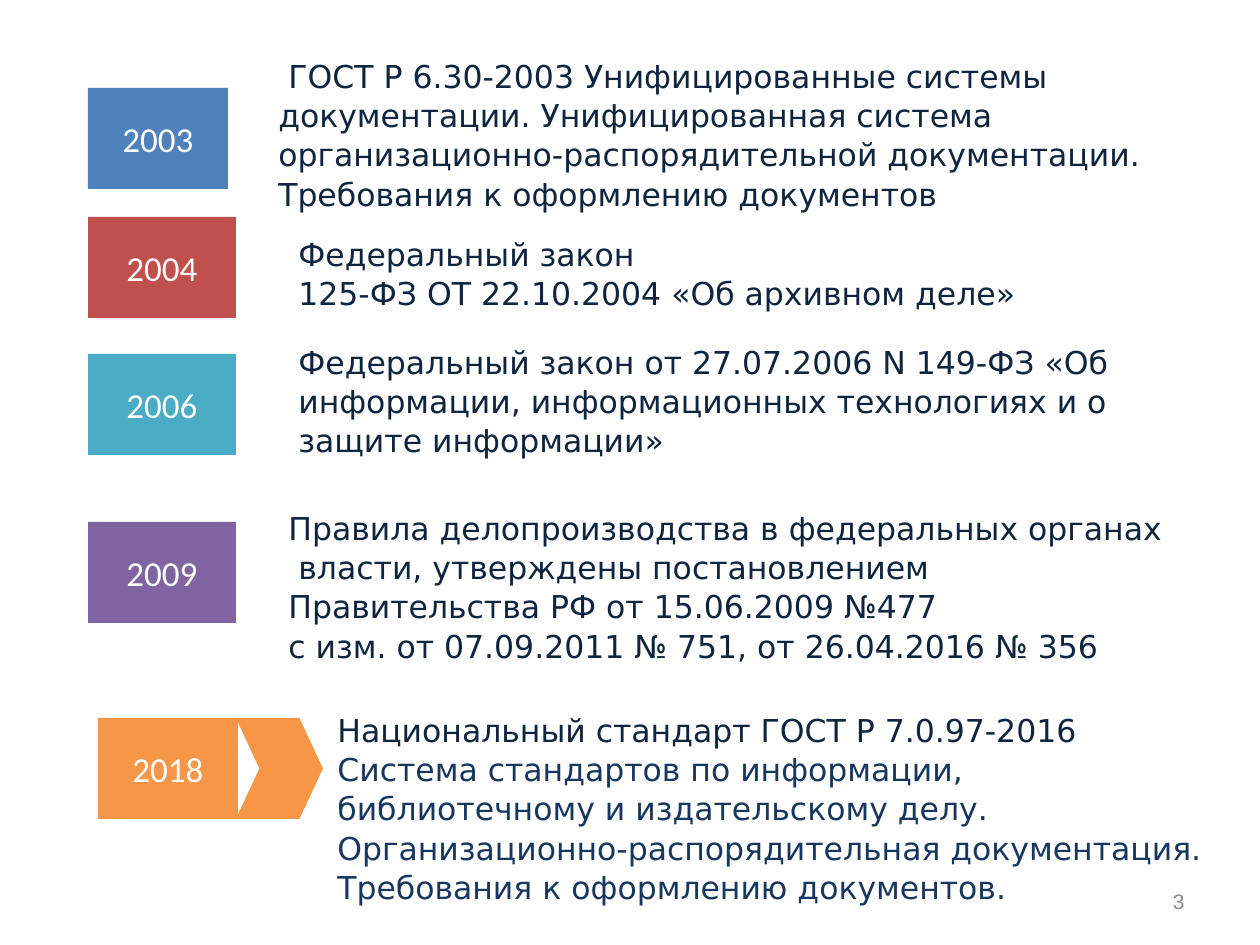
from dataclasses import dataclass

from pptx import Presentation
from pptx.dml.color import RGBColor as Color
from pptx.enum.shapes import MSO_SHAPE as Shape
from pptx.enum.text import MSO_ANCHOR as Anchor, PP_ALIGN as Align
from pptx.util import Emu, Pt

PX = 914400 / 126


def px(length):
    return Emu(round(length * PX))


@dataclass(frozen=True)
class Theme:
    blue: str = "4F81BD"
    red: str = "C0504D"
    teal: str = "4BACC6"
    purple: str = "8064A2"
    orange: str = "F79646"
    white: str = "FFFFFF"
    navy: str = "0F243E"
    dark_blue: str = "17375E"
    gray: str = "8C8C8C"
    year_font: str = "Calibri"
    body_font: str = "DejaVu Sans"
    number_font: str = "Arial"
    year_size: int = 20
    body_size: int = 18
    number_size: int = 12
    body_spacing: float = 1.04


class TimelineSlide:
    def __init__(self, presentation, theme):
        self.theme = theme
        self.slide = presentation.slides.add_slide(presentation.slide_layouts[6])

    def style(self, paragraph, font, size, color, align=Align.LEFT):
        paragraph.alignment = align
        paragraph.font.name = font
        paragraph.font.size = Pt(size)
        paragraph.font.color.rgb = Color.from_string(color)

    def block(self, kind, box, color):
        shape = self.slide.shapes.add_shape(kind, *map(px, box))
        shape.shadow.inherit = False
        shape.fill.solid()
        shape.fill.fore_color.rgb = Color.from_string(color)
        shape.line.fill.background()
        return shape

    def year(self, text, box, color):
        frame = self.block(Shape.RECTANGLE, box, color).text_frame
        frame.vertical_anchor = Anchor.MIDDLE
        frame.text = text
        theme = self.theme
        self.style(frame.paragraphs[0], theme.year_font, theme.year_size,
                   theme.white, Align.CENTER)

    def chevron(self, box, color, depth):
        self.block(Shape.CHEVRON, box, color).adjustments[0] = depth

    def text_frame(self, box):
        frame = self.slide.shapes.add_textbox(*map(px, box)).text_frame
        frame.word_wrap = True
        return frame

    def description(self, box, paragraphs):
        frame = self.text_frame(box)
        theme = self.theme
        for index, (text, color, indent) in enumerate(paragraphs):
            paragraph = frame.paragraphs[0] if index == 0 else frame.add_paragraph()
            paragraph.text = text
            paragraph.line_spacing = theme.body_spacing
            if indent:
                paragraph._p.get_or_add_pPr().set("indent", str(px(indent)))
            self.style(paragraph, theme.body_font, theme.body_size, color)

    def page_number(self, text, box):
        frame = self.text_frame(box)
        frame.vertical_anchor = Anchor.MIDDLE
        frame.text = text
        theme = self.theme
        self.style(frame.paragraphs[0], theme.number_font, theme.number_size,
                   theme.gray, Align.RIGHT)


def main():
    presentation = Presentation()
    presentation.slide_width = px(1260)
    presentation.slide_height = px(945)
    theme = Theme()
    timeline = TimelineSlide(presentation, theme)
    block_height = 101
    space = 10

    years = [
        ("2003", 88, 88, 140, theme.blue),
        ("2004", 88, 217, 148, theme.red),
        ("2006", 88, 354, 148, theme.teal),
        ("2009", 88, 522, 148, theme.purple),
        ("2018", 98, 718, 140, theme.orange),
    ]
    for text, left, top, width, color in years:
        timeline.year(text, (left, top, width, block_height), color)
    timeline.chevron((236, 718, 87, block_height), theme.orange, 0.27)

    descriptions = [
        ((266, 49, 945, 204), [
            ("ГОСТ Р 6.30-2003 Унифицированные системы документации. "
             "Унифицированная система организационно-распорядительной документации. "
             "Требования к оформлению документов", theme.navy, space),
        ]),
        ((286, 227, 893, 89), [
            ("Федеральный закон", theme.navy, 0),
            ("125-ФЗ ОТ 22.10.2004 «Об архивном деле»", theme.navy, 0),
        ]),
        ((286, 335, 935, 127), [
            ("Федеральный закон от 27.07.2006 N 149-ФЗ «Об информации, "
             "информационных технологиях и о защите информации»", theme.navy, 0),
        ]),
        ((276, 501, 916, 165), [
            ("Правила делопроизводства в федеральных органах", theme.navy, 0),
            ("власти, утверждены постановлением Правительства РФ "
             "от 15.06.2009 №477", theme.navy, space),
            ("с изм. от 07.09.2011 № 751, от 26.04.2016 № 356", theme.navy, 0),
        ]),
        ((325, 703, 906, 204), [
            ("Национальный стандарт ГОСТ Р 7.0.97-2016", theme.navy, 0),
            ("Система стандартов по информации, библиотечному и издательскому делу. "
             "Организационно-распорядительная документация.", theme.dark_blue, 0),
            ("Требования к оформлению документов.", theme.dark_blue, 0),
        ]),
    ]
    for box, paragraphs in descriptions:
        timeline.description(box, paragraphs)
    timeline.page_number("3", (903, 876, 294, 50))

    presentation.save("out.pptx")


if __name__ == "__main__":
    main()
